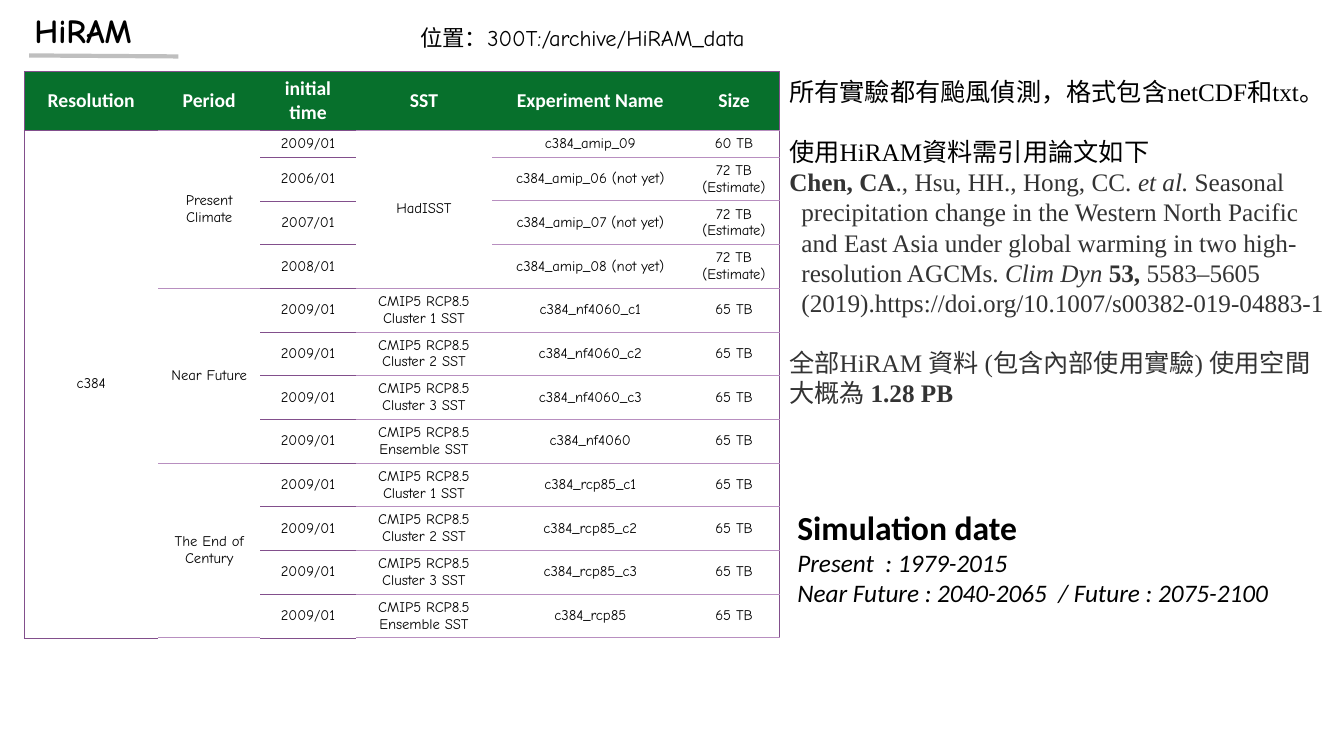
"""Build the HiRAM data overview slide."""
from lxml.etree import SubElement
from pptx import Presentation
from pptx.dml.color import RGBColor
from pptx.enum.text import MSO_ANCHOR, MSO_AUTO_SIZE, PP_ALIGN
from pptx.oxml.ns import qn
from pptx.util import Inches, Pt

COLORS = {
    "header": "07702C", "dark_rule": "824F8C", "light_rule": "B88FC0",
    "underline": "BFBFBF", "black": "000000", "gray": "333333", "white": "FFFFFF",
}
HEADING = {"name": "Calibri", "size": Pt(24), "bold": True}
DATES = {"name": "Calibri", "size": Pt(18), "italic": True}
LOCATION = {"name": "Calibri", "size": Pt(16)}
COMIC = {"name": "Comic Neue"}
NOTE = {"name": "Times New Roman", "size": Pt(18)}
BOLD, ITALIC = {"bold": True}, {"italic": True}


def add_runs(paragraph, base, color, *runs):
    for text, extra in runs:
        run = paragraph.add_run()
        run.text = text
        for attribute, value in {**base, **extra}.items():
            setattr(run.font, attribute, value)
        run.font.color.rgb = RGBColor.from_string(COLORS[color])


def add_border(cell, edge, color, width):
    line = SubElement(cell._tc.get_or_add_tcPr(), qn(f"a:{edge}"), w=str(Pt(width)))
    fill = SubElement(line, qn("a:solidFill"))
    SubElement(fill, qn("a:srgbClr"), val=COLORS[color])


deck = Presentation()
deck.slide_width, deck.slide_height = Inches(13.33), Inches(7.5)
slide = deck.slides.add_slide(deck.slide_layouts[5])

title = slide.shapes.title
title_format = {"left": Inches(0.24), "top": Inches(0.05),
                "width": Inches(1.6), "height": Inches(0.5)}
for attribute, value in title_format.items():
    setattr(title, attribute, value)
title.text_frame.vertical_anchor = MSO_ANCHOR.TOP
title.text_frame.auto_size = MSO_AUTO_SIZE.NONE
title_line = title.text_frame.paragraphs[0]
title_line.alignment = PP_ALIGN.LEFT
add_runs(title_line, {**HEADING, **COMIC}, "black", ("HiRAM", {}))

underline = slide.shapes.add_connector(
    1, Inches(0.29), Inches(0.55), Inches(1.77), Inches(0.56))
underline.line.color.rgb = RGBColor.from_string(COLORS["underline"])
underline.line.width = Pt(3)
SubElement(underline._element.spPr, qn("a:effectLst"))

headers = ["Resolution", "Period", "initial time", "SST", "Experiment Name", "Size"]
sst_runs = ["Cluster 1", "Cluster 2", "Cluster 3", "Ensemble"]
suffixes = ["_c1", "_c2", "_c3", ""]
rows = [headers, ["c384", "Present Climate", "2009/01", "HadISST", "c384_amip_09", "60 TB"]]
for year in (6, 7, 8):
    rows.append(["", "", f"200{year}/01", "", f"c384_amip_0{year} (not yet)", "72 TB (Estimate)"])
for period, stem in (("Near Future", "nf4060"), ("The End of Century", "rcp85")):
    for index, (sst, suffix) in enumerate(zip(sst_runs, suffixes)):
        rows.append(["" if index else period, "2009/01", f"CMIP5 RCP8.5 {sst} SST",
                     f"c384_{stem}{suffix}", "65 TB"])
        rows[-1].insert(0, "")

column_widths = [1.33, 1.01, 0.95, 1.35, 1.95, 0.9]
row_heights = [0.58, 0.27] + [0.43] * 11
experiments = slide.shapes.add_table(
    len(rows), len(headers), Inches(0.24), Inches(0.71),
    Inches(sum(column_widths)), Inches(sum(row_heights))).table
style_id = experiments._tbl.tblPr.find(qn("a:tableStyleId"))
style_id.text = "{2D5ABB26-0587-4C30-8999-92F81FD0307C}"
for column, width in zip(experiments.columns, column_widths):
    column.width = Inches(width)
for row, height in zip(experiments.rows, row_heights):
    row.height = Inches(height)
for column, first, last in ((0, 1, 12), (1, 1, 4), (1, 5, 8), (1, 9, 12), (3, 1, 4)):
    experiments.cell(first, column).merge(experiments.cell(last, column))

last_row, last_column = len(rows) - 1, len(headers) - 1
for r, values in enumerate(rows):
    for c, text in enumerate(values):
        cell = experiments.cell(r, c)
        rule = ("dark_rule", 0.5) if r == 0 or c in (0, 2) else ("light_rule", 0.75)
        block_ends = r == last_row or not experiments.cell(r + 1, c).is_spanned
        if c == 0:
            add_border(cell, "lnL", "dark_rule", 0.5)
        if c == last_column:
            add_border(cell, "lnR", "dark_rule", 0.5)
        if not cell.is_spanned:
            add_border(cell, "lnT", *rule)
        if cell.is_merge_origin or block_ends:
            add_border(cell, "lnB", *rule)
        if r == 0:
            cell.fill.solid()
            cell.fill.fore_color.rgb = RGBColor.from_string(COLORS["header"])
        else:
            cell.fill.background()
        if cell.is_spanned:
            continue
        cell.vertical_anchor = MSO_ANCHOR.MIDDLE
        label = cell.text_frame.paragraphs[0]
        label.alignment = PP_ALIGN.CENTER
        if r == 0:
            add_runs(label, {**HEADING, "size": Pt(14)}, "white", (text, {}))
        else:
            add_runs(label, {**COMIC, "size": Pt(10.5)}, "black", (text, {}))

location_lines = [
    (LOCATION, "black", 0, 0, [("位置：", {}), ("300T:/archive/HiRAM_data", COMIC)]),
]
date_lines = [
    (HEADING, "black", 0, 0, [("Simulation date", {})]),
    (DATES, "black", 0, 0, [("Present  : 1979-2015", {})]),
    (DATES, "black", 0, 0, [("Near Future : 2040-2065  / Future : 2075-2100", {})]),
]
note_lines = [
    (NOTE, "black", 0, 0, [("所有實驗都有颱風偵測，格式包含", {"name": "Noto Sans CJK SC"}),
                           ("netCDF和txt。", {})]),
    (NOTE, "black", 21, 0, [("使用HiRAM資料需引用論文如下", {})]),
    (NOTE, "gray", 0, 0, [("Chen, CA", BOLD), ("., Hsu, HH., Hong, CC. ", {}),
                          ("et al.", ITALIC), (" Seasonal", {})]),
    (NOTE, "gray", 0, 0.12, [("precipitation change in the Western North Pacific", {})]),
    (NOTE, "gray", 0, 0.12, [("and East Asia under global warming in two high-", {})]),
    (NOTE, "gray", 0, 0.12, [("resolution AGCMs. ", {}), ("Clim Dyn ", ITALIC),
                             ("53, ", BOLD), ("5583–5605", {})]),
    (NOTE, "gray", 0, 0.12, [("(2019).https://doi.org/10.1007/s00382-019-04883-1", {})]),
    (NOTE, "gray", 21, 0, [("全部HiRAM 資料 (包含內部使用實驗) 使用空間大概為 ", {}),
                           ("1.28 PB", BOLD)]),
]
text_blocks = [
    ((4.07, 0.19, 4.09, 0.37), location_lines),
    ((7.81, 4.98, 5.52, 1.11), date_lines),
    ((7.73, 0.71, 5.51, 3.43), note_lines),
]
for bounds, lines in text_blocks:
    frame = slide.shapes.add_textbox(*map(Inches, bounds)).text_frame
    frame.word_wrap = True
    for index, (base, color, gap, indent, runs) in enumerate(lines):
        paragraph = frame.add_paragraph() if index else frame.paragraphs[0]
        paragraph.space_before = Pt(gap)
        if indent:
            paragraph._p.get_or_add_pPr().set("marL", str(Inches(indent)))
        add_runs(paragraph, base, color, *runs)

deck.save("out.pptx")
